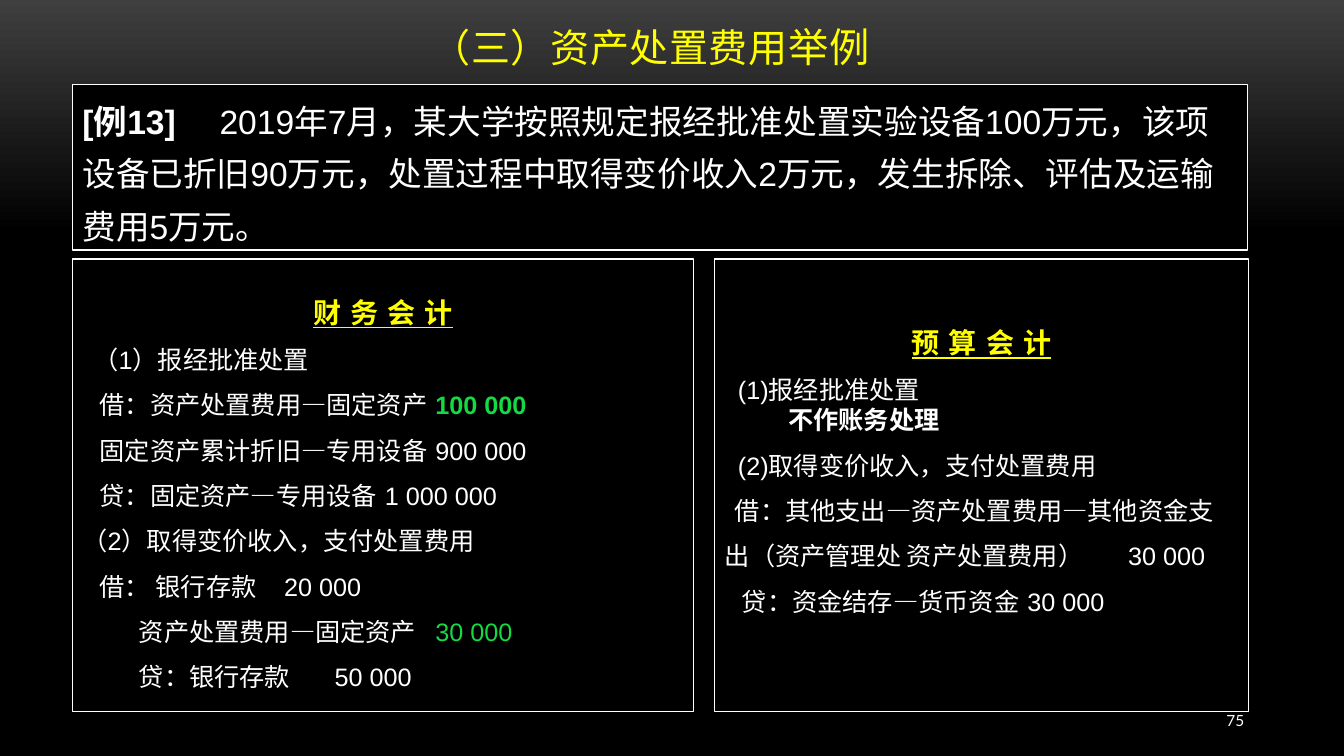
from pptx import Presentation, util as u
from pptx.dml.color import RGBColor
from pptx.enum import shapes, text
from pptx.oxml.ns import qn
from lxml import etree

HUES = {"white": "FFFFFF", "black": "000000", "gray": "3F3F3F",
        "yellow": "FFFF00", "green": "14DA43"}
WIDE, HIGH = u.Inches(13.33), u.Inches(7.5)
LEFT, RIGHT, ROW = 5.4, 53.19, 34.27  # column and row starts, % of slide

# Entries: first-line indent, label, amount, tab stop (inches), amount hue, bold
FINANCE = [
    (0.11, "（1）报经批准处置"),
    (0.17, "借：资产处置费用—固定资产", "100 000", 3.59, "green", True),
    (0.17, "固定资产累计折旧—专用设备", "900 000", 3.59),
    (0.17, "贷：固定资产—专用设备", "1 000 000", 3.31),
    (0, "（2）取得变价收入，支付处置费用"),
    (0.17, "借： 银行存款", "20 000", 2.9),
    (0.56, "资产处置费用—固定资产", "30 000", 3.59, "green"),
    (0.56, "贷：银行存款", "50 000", 2.85),
]
BUDGET = [
    (0.13, "(1)报经批准处置"),
    (0.63, "不作账务处理"),
    (0.13, "(2)取得变价收入，支付处置费用"),
    (0.1, "借：其他支出—资产处置费用—其他资金支出（资产管理处 资产处置费用）",
     "30 000", 3.78),
    (0.17, "贷：资金结存—货币资金", "30 000", 3.37),
]


def hue(name):
    return RGBColor.from_string(HUES[name])


def place(x, y, w, h):
    """Turn percentages of the slide into lengths."""
    return [int(side * part / 100)
            for side, part in zip((WIDE, HIGH, WIDE, HIGH), (x, y, w, h))]


def write(para, words, size, color="white", bold=False, face="Arial"):
    run = para.add_run()
    run.text = words
    font = run.font
    font.size, font.bold, font.name = u.Pt(size), bold, face
    font.color.rgb = hue(color)
    return run


def set_tab(para, stop):
    tabs = etree.SubElement(para._p.get_or_add_pPr(), qn("a:tabLst"))
    etree.SubElement(tabs, qn("a:tab"), pos=str(u.Inches(stop)), algn="l")


def add_panel(slide, *area):
    """Black box with a thin white outline."""
    box = slide.shapes.add_shape(shapes.MSO_SHAPE.RECTANGLE, *place(*area))
    box.shadow.inherit = False
    box.fill.solid()
    box.fill.fore_color.rgb = hue("black")
    box.line.color.rgb = hue("white")
    box.line.width = u.Pt(0.85)
    frame = box.text_frame
    frame.word_wrap = True
    frame.vertical_anchor = text.MSO_ANCHOR.MIDDLE
    frame.paragraphs[0].alignment = text.PP_ALIGN.LEFT
    return frame


def add_entry(frame, dent, label, sum_=None, stop=0, color="white", bold=False):
    para = frame.add_paragraph()
    para.alignment = text.PP_ALIGN.LEFT
    strong = label == "不作账务处理"
    para.line_spacing = 1.0 if strong else 1.5
    props = para._p.get_or_add_pPr()
    props.set("marL", "0")
    props.set("indent", str(u.Inches(dent)))
    if sum_:
        set_tab(para, stop)
    write(para, label, 18, bold=strong)
    if sum_:
        write(para, "\t" + sum_, 18, color, bold)


def add_ledger(slide, area, head, rows):
    frame = add_panel(slide, *area)
    para = frame.paragraphs[0]
    para.alignment = text.PP_ALIGN.CENTER
    para.line_spacing = 1.5
    run = write(para, head, 20, "yellow", True)
    run.font.underline = True
    run._r.rPr.set("spc", "100")
    for row in rows:
        add_entry(frame, *row)
    return frame


def add_title(slide):
    title = slide.shapes.title
    title.left, title.top, title.width, title.height = place(11.4, 2.67, 74.04, 7.33)
    frame = title.text_frame
    frame.auto_size = text.MSO_AUTO_SIZE.NONE
    frame.vertical_anchor = text.MSO_ANCHOR.BOTTOM
    para = frame.paragraphs[0]
    para.alignment = text.PP_ALIGN.CENTER
    face = "Noto Sans CJK SC"
    for words, size in (("（三）资产处置费用", 27.9), ("举例", 28.8)):
        run = write(para, words, size, "yellow", face=face)
        run._r.rPr.set("spc", "50")
        etree.SubElement(run._r.rPr, qn("a:ea"), typeface=face)


def add_case(slide):
    para = add_panel(slide, LEFT, 11.2, 87.4, 21.87).paragraphs[0]
    para.line_spacing = 1.3
    set_tab(para, 1.36)
    write(para, "[例13]", 24, bold=True)
    write(para, "\t2019年7月，某大学按照规定报经批准处置实验设备100万元，"
          "该项设备已折旧90万元，处置过程中取得变价收入2万元，"
          "发生拆除、评估及运输费用5万元。", 24)


def add_number(slide):
    frame = slide.shapes.add_textbox(*place(82.52, 92.67, 10.8, 5.33)).text_frame
    frame.word_wrap = True
    frame.vertical_anchor = text.MSO_ANCHOR.MIDDLE
    para = frame.paragraphs[0]
    para.alignment = text.PP_ALIGN.RIGHT
    write(para, "75", 11, face="Lato")


def paint(slide):
    """Background fading from gray to black, top down."""
    fill = slide.background.fill
    fill.gradient()
    fill.gradient_angle = 270
    for stop, name, spot in zip(fill.gradient_stops, ("gray", "black"), (0, 0.31)):
        stop.color.rgb = hue(name)
        stop.position = spot


def main():
    deck = Presentation()
    deck.slide_width, deck.slide_height = WIDE, HIGH
    slide = deck.slides.add_slide(deck.slide_layouts[5])
    paint(slide)
    add_title(slide)
    add_case(slide)
    # Two ledgers side by side
    add_ledger(slide, (LEFT, ROW, 46.21, 59.87), "财 务 会 计", FINANCE)
    budget = add_ledger(slide, (RIGHT, ROW, 39.68, 59.87), "预 算 会 计", BUDGET)
    budget.margin_bottom = u.Inches(0.5)
    add_number(slide)
    deck.save("out.pptx")


if __name__ == "__main__":
    main()
